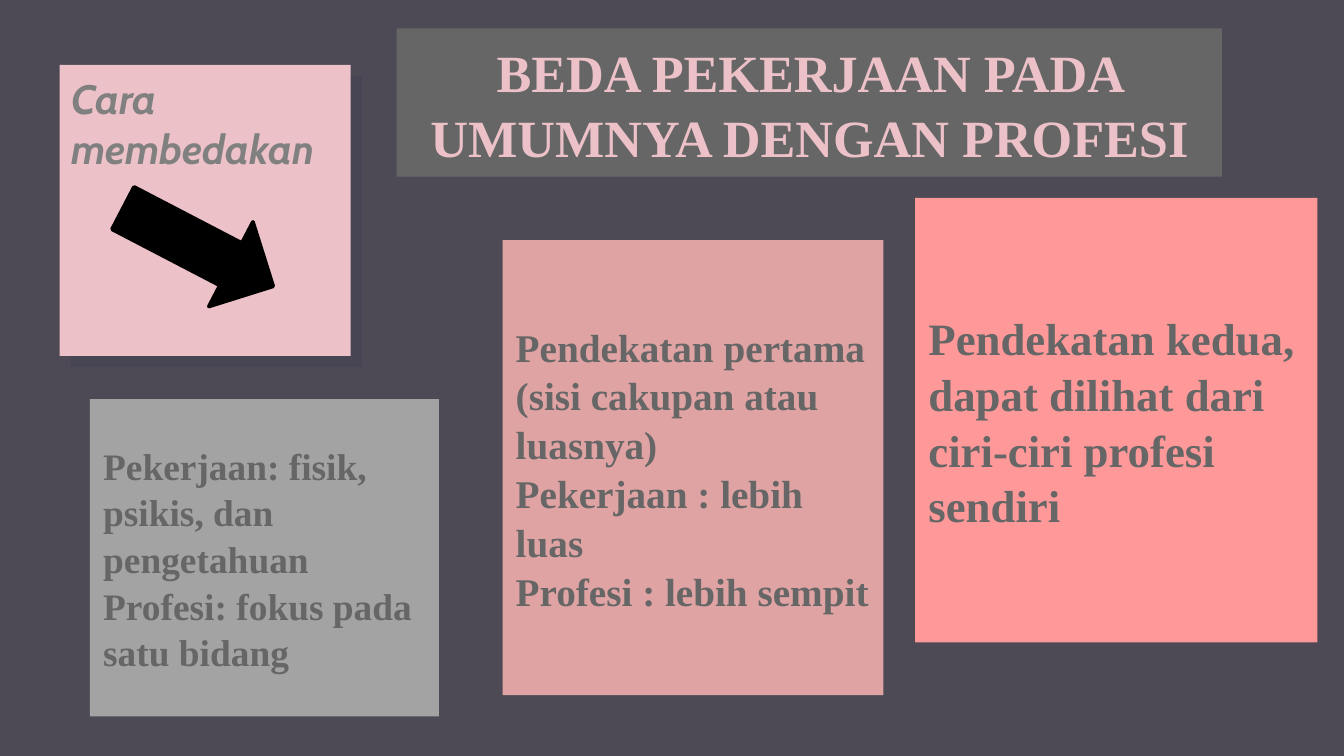
"""Build the slide on telling an occupation apart from a profession."""
from lxml.etree import SubElement
from pptx import Presentation
from pptx.dml.color import RGBColor
from pptx.enum.shapes import MSO_SHAPE
from pptx.enum.text import MSO_ANCHOR, MSO_AUTO_SIZE, PP_ALIGN
from pptx.oxml.ns import qn
from pptx.util import Pt

BACKDROP = RGBColor(0x4D, 0x4A, 0x56)
NAVY = RGBColor(0x1B, 0x1B, 0x46)
PINK = RGBColor(0xEC, 0xC1, 0xC8)
CORAL = RGBColor(0xFF, 0x99, 0x99)
ROSE = RGBColor(0xE0, 0xA3, 0xA3)
SILVER = RGBColor(0xA3, 0xA3, 0xA3)
GRAY = RGBColor(0x80, 0x80, 0x80)
DARK_GRAY = RGBColor(0x66, 0x66, 0x66)
BLACK = RGBColor(0, 0, 0)

SERIF = "Times New Roman"
TITLE = "Cara membedakan"
HEADING = ["BEDA PEKERJAAN PADA UMUMNYA DENGAN PROFESI"]
PANELS = [
    ((490.3, 106, 215.5, 238.2), CORAL, 24,
     ["Pendekatan kedua, dapat dilihat dari ciri-ciri profesi sendiri"]),
    ((269.2, 128.7, 204, 243.7), ROSE, 21,
     ["Pendekatan pertama (sisi cakupan atau luasnya)",
      "Pekerjaan : lebih luas", "Profesi : lebih sempit"]),
    ((48.2, 213.8, 187, 170), SILVER, 20,
     ["Pekerjaan: fisik, psikis, dan pengetahuan",
      "Profesi: fokus pada satu bidang"]),
]
HEADING_BOX = (212.5, 15.2, 442.1, 79.5)
TITLE_BOX = (31, 32.4, 153.4, 158.4)
NOTE_LEFT, NOTE_TOP, NOTE_SIDE, SHADOW_OFFSET = 32, 34.8, 155.9, 6
ARROW_BOX = (80.6, 87.1, 51.1, 90.7)


def write_text(shape, lines, size, color, font=SERIF, italic=False,
               align=PP_ALIGN.LEFT, anchor=MSO_ANCHOR.MIDDLE, spacing=1.04):
    frame = shape.text_frame
    frame.word_wrap = True
    frame.auto_size = MSO_AUTO_SIZE.NONE
    frame.vertical_anchor = anchor
    frame.margin_left = frame.margin_right = Pt(7.2)
    frame.margin_top = frame.margin_bottom = Pt(7.2)
    frame.text = "\n".join(lines)
    for paragraph in frame.paragraphs:
        paragraph.alignment = align
        paragraph.line_spacing = spacing
        paragraph.font.name = font
        paragraph.font.size = Pt(size)
        paragraph.font.bold = True
        paragraph.font.italic = italic
        paragraph.font.color.rgb = color


def add_block(slide, box, color, preset=MSO_SHAPE.RECTANGLE):
    block = slide.shapes.add_shape(preset, *map(Pt, box))
    block.shadow.inherit = False
    block.fill.solid()
    block.fill.fore_color.rgb = color
    block.line.fill.background()
    return block


def main():
    deck = Presentation()
    deck.slide_width, deck.slide_height = Pt(720), Pt(405)
    slide = deck.slides.add_slide(deck.slide_layouts[5])
    slide.background.fill.solid()
    slide.background.fill.fore_color.rgb = BACKDROP

    for offset, color in ((SHADOW_OFFSET, NAVY), (0, PINK)):
        box = (NOTE_LEFT + offset, NOTE_TOP + offset, NOTE_SIDE, NOTE_SIDE)
        note = add_block(slide, box, color)
        if offset:
            tint = note.fill._xPr.find(".//" + qn("a:srgbClr"))
            SubElement(tint, qn("a:alpha"), val="10000")

    title = slide.shapes.title
    title.left, title.top, title.width, title.height = map(Pt, TITLE_BOX)
    slide.shapes._spTree.append(title._element)
    write_text(title, [TITLE], 22, GRAY, font="Cabin", italic=True,
               anchor=MSO_ANCHOR.TOP, spacing=1.0)

    for box, color, size, lines in PANELS:
        write_text(add_block(slide, box, color), lines, size, DARK_GRAY)
    write_text(add_block(slide, HEADING_BOX, DARK_GRAY), HEADING, 28, PINK,
               align=PP_ALIGN.CENTER)

    arrow = add_block(slide, ARROW_BOX, BLACK, MSO_SHAPE.DOWN_ARROW)
    arrow.rotation = 297.5
    arrow.line.color.rgb = BLACK
    arrow.line.width = Pt(2)
    deck.save("out.pptx")


if __name__ == "__main__":
    main()
